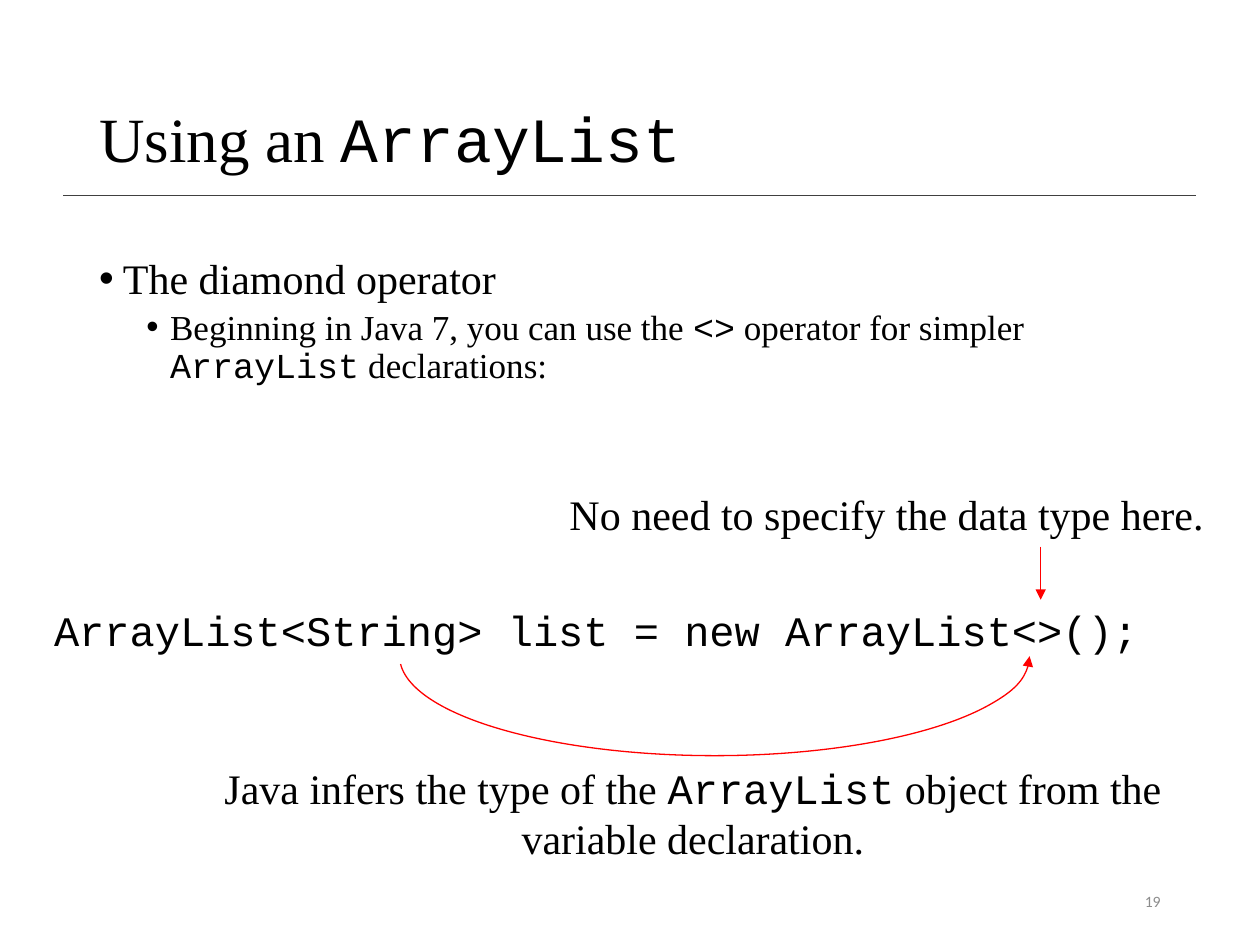
from pptx import Presentation
from pptx.dml.color import RGBColor
from pptx.enum.shapes import MSO_CONNECTOR, MSO_SHAPE
from pptx.enum.text import MSO_ANCHOR, MSO_AUTO_SIZE, PP_ALIGN
from pptx.util import Cm, Pt
from lxml.etree import SubElement
from pptx.oxml.ns import qn

BLACK = RGBColor(0, 0, 0)
DARK = RGBColor(0x40, 0x40, 0x40)
GRAY = RGBColor(0x8C, 0x8C, 0x8C)
RED = RGBColor(0xFF, 0, 0)
SERIF, MONO, SANS = "Times New Roman", "Courier New", "Calibri"

FRAME = {"word_wrap": True, "auto_size": MSO_AUTO_SIZE.NONE}
TIGHT = {"line_spacing": 0.9}


def apply(item, form):
    for name, value in form.items():
        setattr(item, name, value)


def place(shape, box):
    sides = ("left", "top", "width", "height")
    apply(shape, dict(zip(sides, map(Cm, box))))


def write(para, parts, size, color=BLACK, form=None):
    apply(para, form or {})
    for text, face in parts:
        run = para.add_run()
        run.text = text
        apply(run.font, {"name": face, "size": Pt(size)})
        run.font.color.rgb = color


def add_text(slide, box, parts, size, color=BLACK, form=None, anchor=MSO_ANCHOR.TOP):
    frame = slide.shapes.add_textbox(*map(Cm, box)).text_frame
    apply(frame, {**FRAME, "vertical_anchor": anchor})
    write(frame.paragraphs[0], parts, size, color, form)
    return frame


def add_title(slide, box, parts, size):
    title = slide.shapes.title
    place(title, box)
    apply(title.text_frame, {**FRAME, "vertical_anchor": MSO_ANCHOR.MIDDLE})
    form = {**TIGHT, "alignment": PP_ALIGN.LEFT}
    write(title.text_frame.paragraphs[0], parts, size, form=form)


def add_list(slide, box, items):
    frame = slide.shapes.add_textbox(*map(Cm, box)).text_frame
    apply(frame, FRAME)
    for level, (parts, size, space) in enumerate(items):
        para = frame.add_paragraph() if level else frame.paragraphs[0]
        form = {**TIGHT, "level": level, "space_before": Pt(space)}
        write(para, parts, size, form=form)
        props = para._p.get_or_add_pPr()
        props.set("marL", str(Cm(0.48 + 0.95 * level)))
        props.set("indent", str(-Cm(0.48)))
        SubElement(props, qn("a:buFont"), typeface="Arial")
        SubElement(props, qn("a:buChar"), char="•")


def style_line(shape, color, width, end=None):
    shape.line.color.rgb = color
    shape.line.width = Pt(width)
    if end:
        SubElement(shape.line._get_or_add_ln(), qn(end), type="triangle")


def add_line(slide, ends, color, width, end=None):
    line = slide.shapes.add_connector(MSO_CONNECTOR.STRAIGHT, *map(Cm, ends))
    style_line(line, color, width, end)
    SubElement(line._element.spPr, qn("a:effectLst"))


def add_arc(slide, box, angles, color, width):
    arc = slide.shapes.add_shape(MSO_SHAPE.ARC, *map(Cm, box))
    arc.rotation = 90
    arc.shadow.inherit = False
    arc.fill.background()
    for index, angle in enumerate(angles):
        arc.adjustments[index] = angle * 0.6
    style_line(arc, color, width, "a:headEnd")


def main():
    deck = Presentation()
    apply(deck, {"slide_width": Cm(25.4), "slide_height": Cm(19.05)})
    slide = deck.slides.add_slide(deck.slide_layouts[5])

    add_line(slide, (1.27, 3.94, 24.1, 3.94), DARK, 1)
    add_title(slide, (1.75, 1.02, 21.9, 3.68),
              [("Using an ", SERIF), ("ArrayList", MONO)], 36)
    add_list(slide, (1.75, 5.08, 21.9, 12.09), [
        ([("The diamond operator", SERIF)], 24, 7.5),
        ([("Beginning in Java 7, you can use the ", SERIF), ("<>", MONO),
          (" operator for simpler ", SERIF), ("ArrayList", MONO),
          (" declarations:", SERIF)], 20, 3.8),
    ])
    add_text(slide, (3.81, 15.24, 20.32, 2.31),
             [("Java infers the type of the ", SERIF), ("ArrayList", MONO),
              (" object from the variable declaration.", SERIF)],
             24, form={"alignment": PP_ALIGN.CENTER})
    add_text(slide, (0.84, 12.07, 22.86, 1.27),
             [("ArrayList<String> list = new ArrayList<>();", MONO)], 24)
    add_arc(slide, (12.4, 6.88, 4.01, 12.7), (270, 88.57), RED, 0.75)
    add_text(slide, (11.23, 9.73, 13.54, 1.3),
             [("No need to specify the data type here.", SERIF)], 24)
    add_line(slide, (20.98, 11.02, 20.98, 12.09), RED, 0.75, "a:tailEnd")
    add_text(slide, (17.93, 17.65, 5.72, 1.02), [("19", SANS)], 9, GRAY,
             {"alignment": PP_ALIGN.RIGHT}, MSO_ANCHOR.MIDDLE)
    deck.save("out.pptx")


if __name__ == "__main__":
    main()
